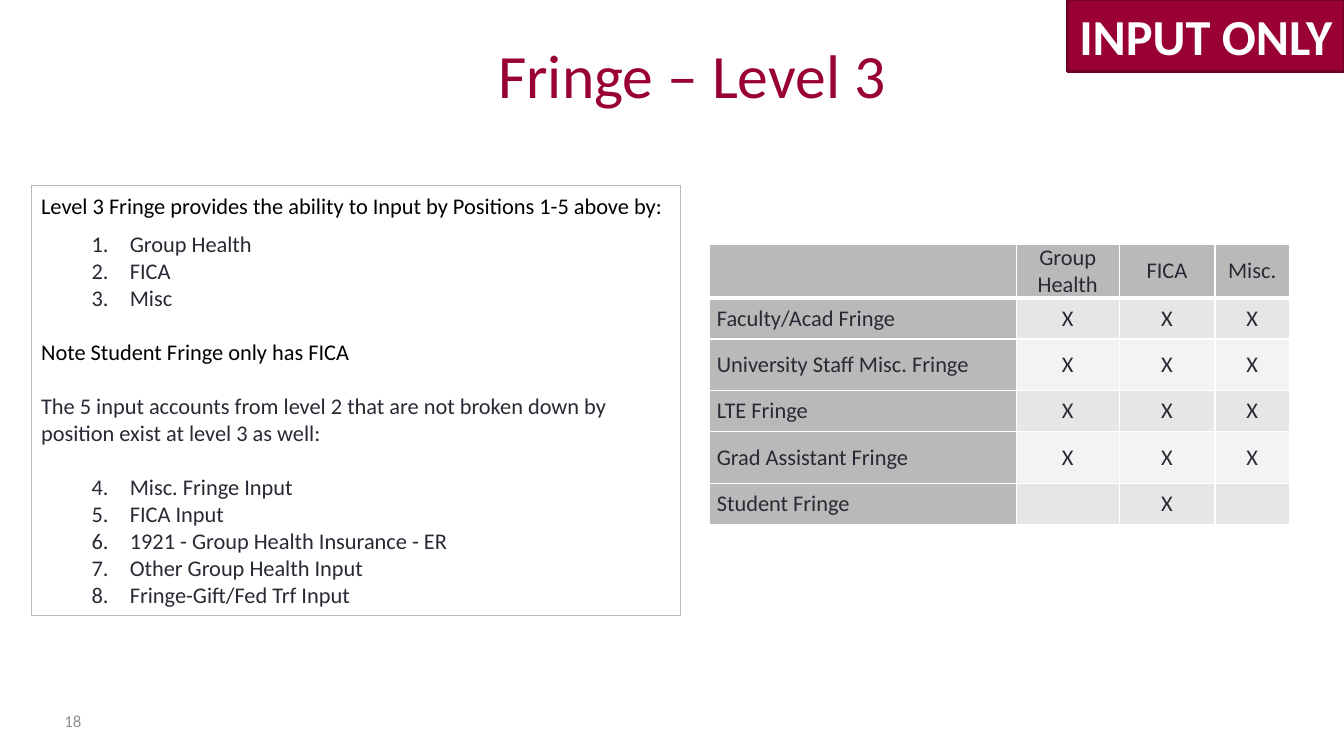
from lxml import etree
from pptx import Presentation
from pptx.dml.color import RGBColor
from pptx.enum.shapes import MSO_SHAPE
from pptx.enum.text import MSO_ANCHOR, PP_ALIGN
from pptx.oxml.ns import qn
from pptx.util import Inches, Pt

RECT = MSO_SHAPE.RECTANGLE
TOP, MIDDLE, BOTTOM = MSO_ANCHOR.TOP, MSO_ANCHOR.MIDDLE, MSO_ANCHOR.BOTTOM
LEFT, CENTER = PP_ALIGN.LEFT, PP_ALIGN.CENTER
RED, INK, GREY, WHITE, BLACK = "990033", "292934", "B9B9B9", "FFFFFF", "000000"
BANDS = ["E6E6E6", "F3F3F3"]
GAP = 19.5
NOTES = [
    (["Level 3 Fringe provides the ability to Input by Positions 1-5 above by:"], BLACK, 0, 0),
    (["Group Health", "FICA", "Misc"], INK, 8, 1),
    (["Note Student Fringe only has FICA"], BLACK, GAP, 0),
    (["The 5 input accounts from level 2 that are not broken down by "
      "position exist at level 3 as well:"], INK, GAP, 0),
    (["Misc. Fringe Input", "FICA Input", "1921 - Group Health Insurance - ER",
      "Other Group Health Input", "Fringe-Gift/Fed Trf Input"], INK, GAP, 4),
]
COLS = [3.04, 1.02, 0.95, 0.74]
ROWS = [0.53, 0.41, 0.51, 0.41, 0.51, 0.41]
GRID = [
    ["", "Group Health", "FICA", "Misc."],
    ["Faculty/Acad Fringe", "X", "X", "X"],
    ["University Staff Misc. Fringe", "X", "X", "X"],
    ["LTE Fringe", "X", "X", "X"],
    ["Grad Assistant Fringe", "X", "X", "X"],
    ["Student Fringe", "", "X", ""],
]


def rgb(code):
    """Turn a hex string into a colour."""
    return RGBColor.from_string(code)


def style(para, size, color, bold=False, align=LEFT):
    """Set the font and alignment of a paragraph."""
    para.alignment = align
    font = para.font
    font.name, font.size, font.bold = "Calibri", Pt(size), bold
    font.color.rgb = rgb(color)


def label(slide, box, text, size, color, align, anchor, base=0.05):
    """Add one line of plain text."""
    frame = slide.shapes.add_textbox(*map(Inches, box)).text_frame
    frame.word_wrap = True
    frame.vertical_anchor = anchor
    frame.margin_bottom = Inches(base)
    frame.text = text
    style(frame.paragraphs[0], size, color, align=align)


def panel(slide, box, fill, line, width):
    """Add a rectangle and return its text frame."""
    shape = slide.shapes.add_shape(RECT, *map(Inches, box))
    shape.shadow.inherit = False
    if fill:
        shape.fill.solid()
        shape.fill.fore_color.rgb = rgb(fill)
    else:
        shape.fill.background()
    shape.line.color.rgb = rgb(line)
    shape.line.width = Pt(width)
    return shape.text_frame


def badge(slide, box):
    """Add the corner badge."""
    frame = panel(slide, box, RED, "710026", 2)
    frame.word_wrap = False
    frame.vertical_anchor = MIDDLE
    frame.text = "INPUT ONLY"
    style(frame.paragraphs[0], 36, WHITE, True, CENTER)


def number(para, start):
    """Number a paragraph in a list that begins at start."""
    props = para._p.get_or_add_pPr()
    props.set("marL", str(Inches(0.88)))
    props.set("indent", str(Inches(-0.38)))
    etree.SubElement(props, qn("a:buFont"), typeface="+mj-lt")
    etree.SubElement(props, qn("a:buAutoNum"), type="arabicPeriod", startAt=str(start))


def notes(slide, box):
    """Add the framed notes with their numbered lists."""
    frame = panel(slide, box, None, GREY, 0.75)
    frame.word_wrap = True
    frame.vertical_anchor = TOP
    para = frame.paragraphs[0]
    for lines, color, gap, start in NOTES:
        for i, text in enumerate(lines):
            if para.runs:
                para = frame.add_paragraph()
            para.text = text
            para.space_before = Pt(0 if i else gap)
            if start:
                number(para, start)
            style(para, 16, color)
    frame.paragraphs[0].line_spacing = 1.07


def border(cell, base):
    """Draw white cell borders, with the given width below."""
    props = cell._tc.get_or_add_tcPr()
    for i, side in enumerate("LRTB"):
        width = Pt(base if side == "B" else 1)
        line = etree.Element(qn("a:ln" + side), w=str(width))
        solid = etree.SubElement(line, qn("a:solidFill"))
        etree.SubElement(solid, qn("a:srgbClr"), val=WHITE)
        props.insert(i, line)


def matrix(slide, box):
    """Add the table of fringe types by input."""
    table = slide.shapes.add_table(len(ROWS), len(COLS), *map(Inches, box)).table
    for col, width in zip(table.columns, COLS):
        col.width = Inches(width)
    for r, (row, height) in enumerate(zip(table.rows, ROWS)):
        row.height = Inches(height)
        for c, cell in enumerate(row.cells):
            cell.text = GRID[r][c]
            cell.vertical_anchor = MIDDLE
            cell.margin_left = cell.margin_right = Inches(0.07)
            cell.margin_top = cell.margin_bottom = 0
            cell.fill.solid()
            cell.fill.fore_color.rgb = rgb(BANDS[(r - 1) % 2] if r and c else GREY)
            border(cell, 1 if r else 3)
            style(cell.text_frame.paragraphs[0], 16, INK, align=CENTER if c else LEFT)


def main():
    """Build the slide and save it."""
    deck = Presentation()
    deck.slide_width, deck.slide_height = Inches(13.33), Inches(7.5)
    slide = deck.slides.add_slide(deck.slide_layouts[6])
    label(slide, (0.68, 0.24, 12.37, 0.88), "Fringe – Level 3", 44, RED, CENTER, BOTTOM, 0.02)
    label(slide, (0.54, 6.95, 0.56, 0.4), "18", 12, "8E8E90", LEFT, MIDDLE)
    notes(slide, (0.31, 1.84, 6.44, 4.27))
    matrix(slide, (7.04, 2.42, sum(COLS), sum(ROWS)))
    badge(slide, (10.59, 0, 2.74, 0.71))
    deck.save("out.pptx")


if __name__ == "__main__":
    main()
